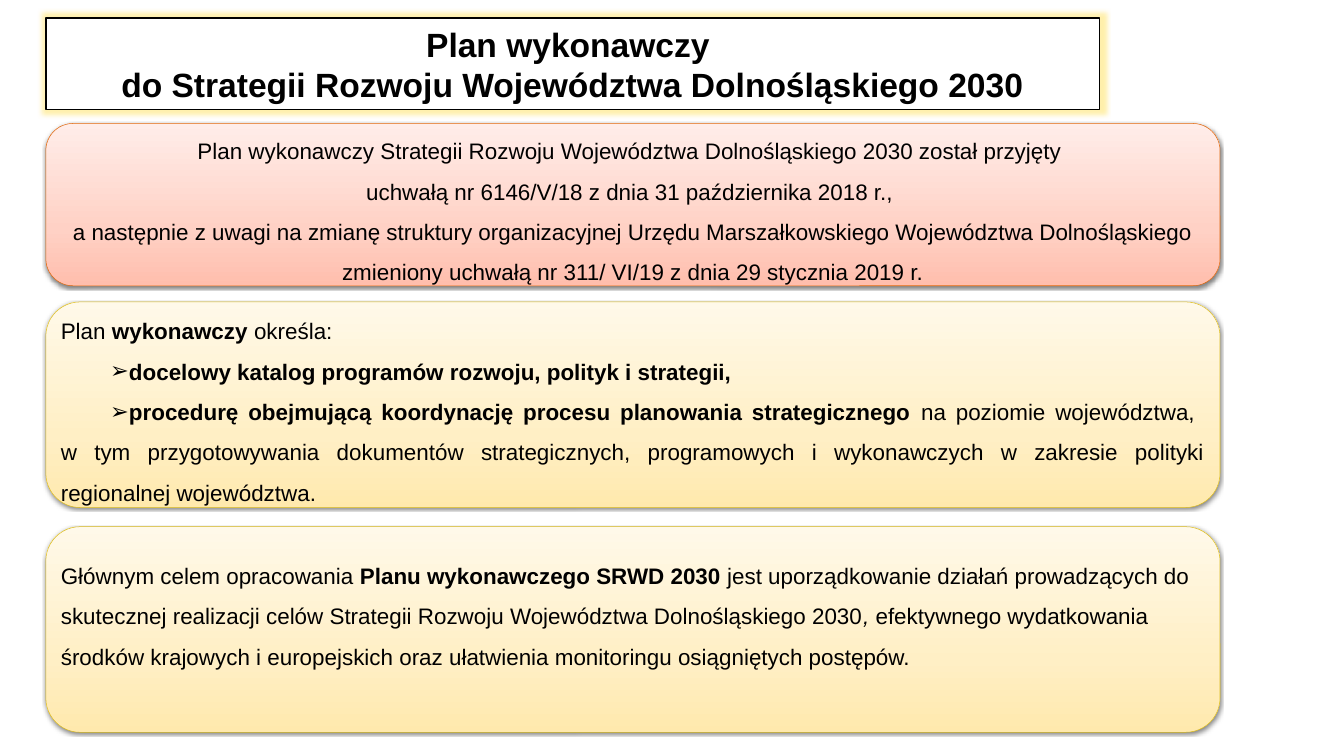
import pptx
import pptx.util
import pptx.dml.color
import pptx.enum.shapes
import pptx.enum.text
import pptx.oxml
import pptx.oxml.ns

Inches = pptx.util.Inches
Pt = pptx.util.Pt
ALIGN = pptx.enum.text.PP_ALIGN
COLORS = {
    "text": "000000", "paper": "FFFFFF", "glow": "FFD92E",
    "yellow_line": "DCBC1E", "red_line": "DE670B",
}
GRADIENTS = {
    "yellow": ((0, "FFE9AD"), (35, "FFEFC5"), (100, "FFF9E9")),
    "red": ((0, "FFBEAD"), (35, "FFD1C5"), (100, "FFEDE9")),
}
LEFT = 0.91
PANEL_WIDTH = 23.3


def element(tag, attributes="", inner=""):
    namespace = pptx.oxml.ns.nsdecls("a")
    return pptx.oxml.parse_xml(f"<a:{tag} {namespace} {attributes}>{inner}</a:{tag}>")


def color_xml(color, alpha=100):
    return f'<a:srgbClr val="{color}"><a:alpha val="{alpha * 1000}"/></a:srgbClr>'


class SlideBuilder:
    font_name = "Arial"
    title_size = 48
    body_size = 32

    def __init__(self, slide):
        self.slide = slide

    def color(self, name):
        return pptx.dml.color.RGBColor.from_string(COLORS[name])

    def style_run(self, run, size, style):
        run.font.name = self.font_name
        run.font.size = Pt(size)
        run.font.bold = style == "bold"
        run.font.italic = style == "italic"
        run.font.color.rgb = self.color("text")

    def outline(self, shape, color, width):
        shape.line.color.rgb = self.color(color)
        shape.line.width = Pt(width)

    def title(self, lines, top, width, height):
        title = self.slide.shapes.title
        title.left, title.top = Inches(LEFT), Inches(top)
        title.width, title.height = Inches(width), Inches(height)
        properties = title._element.spPr
        properties.append(element("prstGeom", 'prst="roundRect"', "<a:avLst/>"))
        title.fill.solid()
        title.fill.fore_color.rgb = self.color("paper")
        self.outline(title, "text", 2)
        glow = f'<a:glow rad="{Pt(14)}">{color_xml(COLORS["glow"], 40)}</a:glow>'
        properties.append(element("effectLst", "", glow))
        frame = title.text_frame
        frame.text = "\n".join(lines)
        frame.word_wrap = True
        frame.auto_size = pptx.enum.text.MSO_AUTO_SIZE.NONE
        frame.vertical_anchor = pptx.enum.text.MSO_ANCHOR.MIDDLE
        for paragraph in frame.paragraphs:
            paragraph.alignment = ALIGN.CENTER
            for run in paragraph.runs:
                self.style_run(run, self.title_size, "bold")

    def panel(self, palette, top, height):
        panel = self.slide.shapes.add_shape(
            pptx.enum.shapes.MSO_SHAPE.ROUNDED_RECTANGLE,
            Inches(LEFT), Inches(top), Inches(PANEL_WIDTH), Inches(height))
        self.outline(panel, f"{palette}_line", 0.75)
        stops = "".join(f'<a:gs pos="{position * 1000}">{color_xml(color)}</a:gs>'
                        for position, color in GRADIENTS[palette])
        properties = panel._element.spPr
        properties.find(pptx.oxml.ns.qn("a:prstGeom")).addnext(element(
            "gradFill", 'rotWithShape="1"',
            f'<a:gsLst>{stops}</a:gsLst><a:lin ang="16200000" scaled="0"/>'))
        shadow = (f'<a:outerShdw blurRad="{Pt(4)}" dist="{Pt(2)}" dir="5400000" '
                  f'rotWithShape="0">{color_xml(COLORS["text"], 50)}</a:outerShdw>')
        properties.append(element("effectLst", "", shadow))
        frame = panel.text_frame
        frame.word_wrap = True
        frame.vertical_anchor = pptx.enum.text.MSO_ANCHOR.MIDDLE
        return frame

    def paragraph(self, frame, parts, alignment=ALIGN.LEFT, bullet=False):
        first = frame.paragraphs[0]
        paragraph = first if not first.runs else frame.add_paragraph()
        paragraph.alignment = alignment
        paragraph.line_spacing = 1.5
        if bullet:
            properties = paragraph._p.get_or_add_pPr()
            properties.set("marL", "0")
            properties.set("indent", str(Inches(0.98)))
            properties.append(element("buFont", 'typeface="Wingdings"'))
            properties.append(element("buChar", 'char="➢"'))
            properties.find(pptx.oxml.ns.qn("a:buFont")).set("typeface", self.font_name)
        for text, style in parts:
            for index, line in enumerate(text.split("\n")):
                if index:
                    paragraph.add_line_break()
                run = paragraph.add_run()
                run.text = line
                self.style_run(run, self.body_size, style)


def main():
    presentation = pptx.Presentation()
    presentation.slide_width = Inches(26.67)
    presentation.slide_height = Inches(15)
    builder = SlideBuilder(presentation.slides.add_slide(presentation.slide_layouts[5]))

    builder.title(["Plan wykonawczy ",
                   "do Strategii Rozwoju Województwa Dolnośląskiego 2030"], 0.36, 20.91, 1.81)

    scope = builder.panel("yellow", 5.99, 4.08)
    builder.paragraph(scope, [("Plan", ""), (" wykonawczy ", "bold"), ("określa:", "")])
    builder.paragraph(scope, [
        ("docelowy katalog programów rozwoju, polityk i strategii, ", "bold"),
    ], ALIGN.JUSTIFY, bullet=True)
    builder.paragraph(scope, [
        ("procedurę obejmującą koordynację procesu planowania strategicznego", "bold"),
        (" na poziomie województwa, \nw tym przygotowywania dokumentów strategicznych, "
         "programowych i wykonawczych w zakresie polityki regionalnej województwa.", ""),
    ], ALIGN.JUSTIFY, bullet=True)

    goal = builder.panel("yellow", 10.45, 4.08)
    goal.margin_bottom = Inches(0.85)
    builder.paragraph(goal, [
        ("Głównym celem opracowania ", ""),
        ("Planu wykonawczego SRWD 2030", "bold"),
        (" jest uporządkowanie działań prowadzących do skutecznej realizacji celów "
         "Strategii Rozwoju Województwa Dolnośląskiego 2030", ""),
        (",", "italic"),
        (" efektywnego wydatkowania środków krajowych i europejskich oraz ułatwienia "
         "monitoringu osiągniętych postępów.", ""),
    ])

    adoption = builder.panel("red", 2.45, 3.22)
    adoption.margin_left = adoption.margin_right = Inches(0.07)
    adoption.margin_top = adoption.margin_bottom = Inches(0.07)
    for sentence in (
        "Plan wykonawczy Strategii Rozwoju Województwa Dolnośląskiego 2030 został przyjęty ",
        "uchwałą nr 6146/V/18 z dnia 31 października 2018 r., ",
        "a następnie z uwagi na zmianę struktury organizacyjnej Urzędu Marszałkowskiego "
        "Województwa Dolnośląskiego zmieniony uchwałą nr 311/ VI/19 z dnia 29 stycznia 2019 r.",
    ):
        builder.paragraph(adoption, [(sentence, "")], ALIGN.CENTER)

    presentation.save("out.pptx")


if __name__ == "__main__":
    main()
